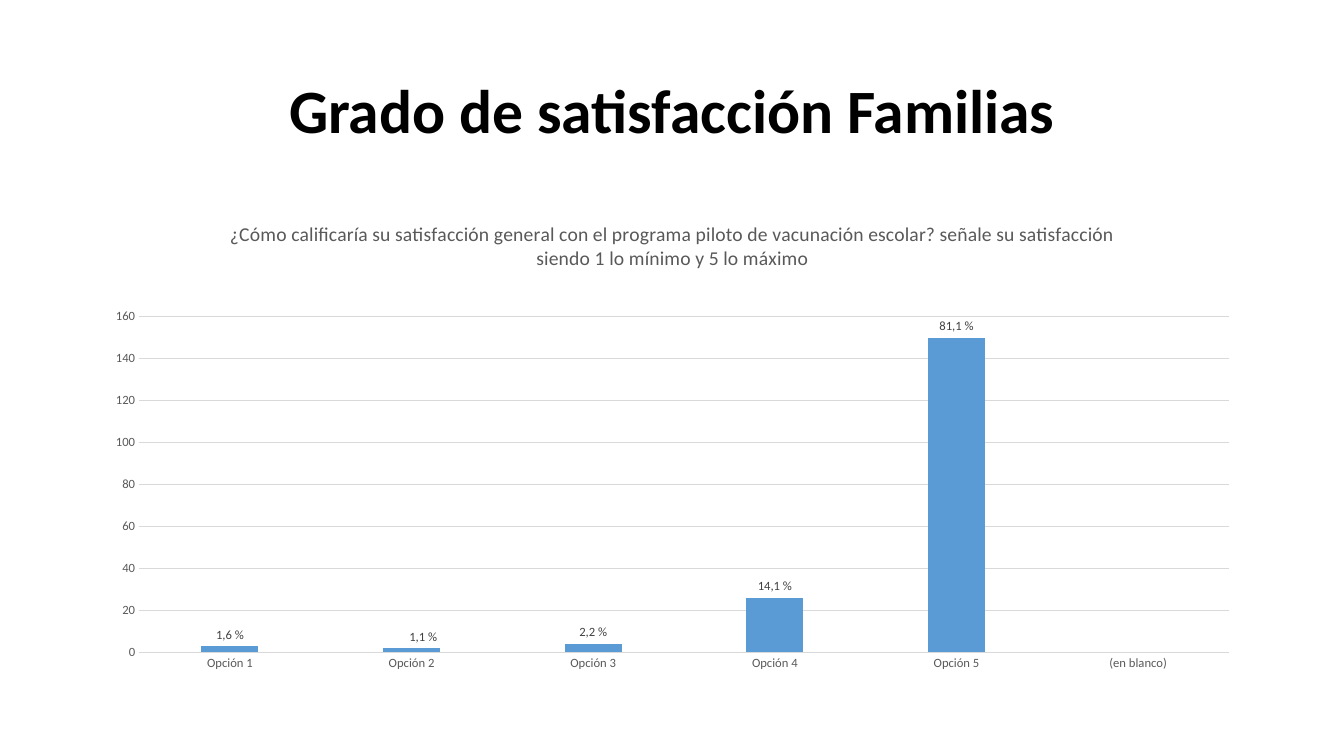
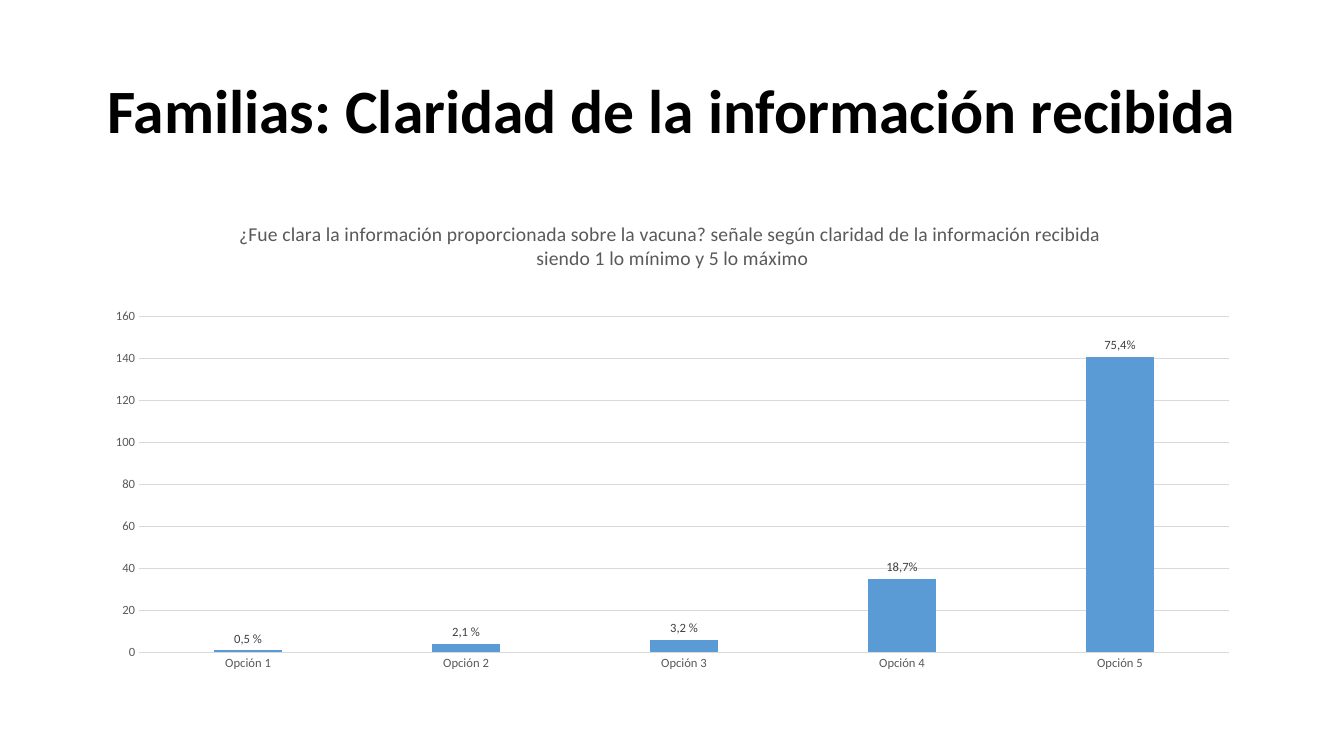
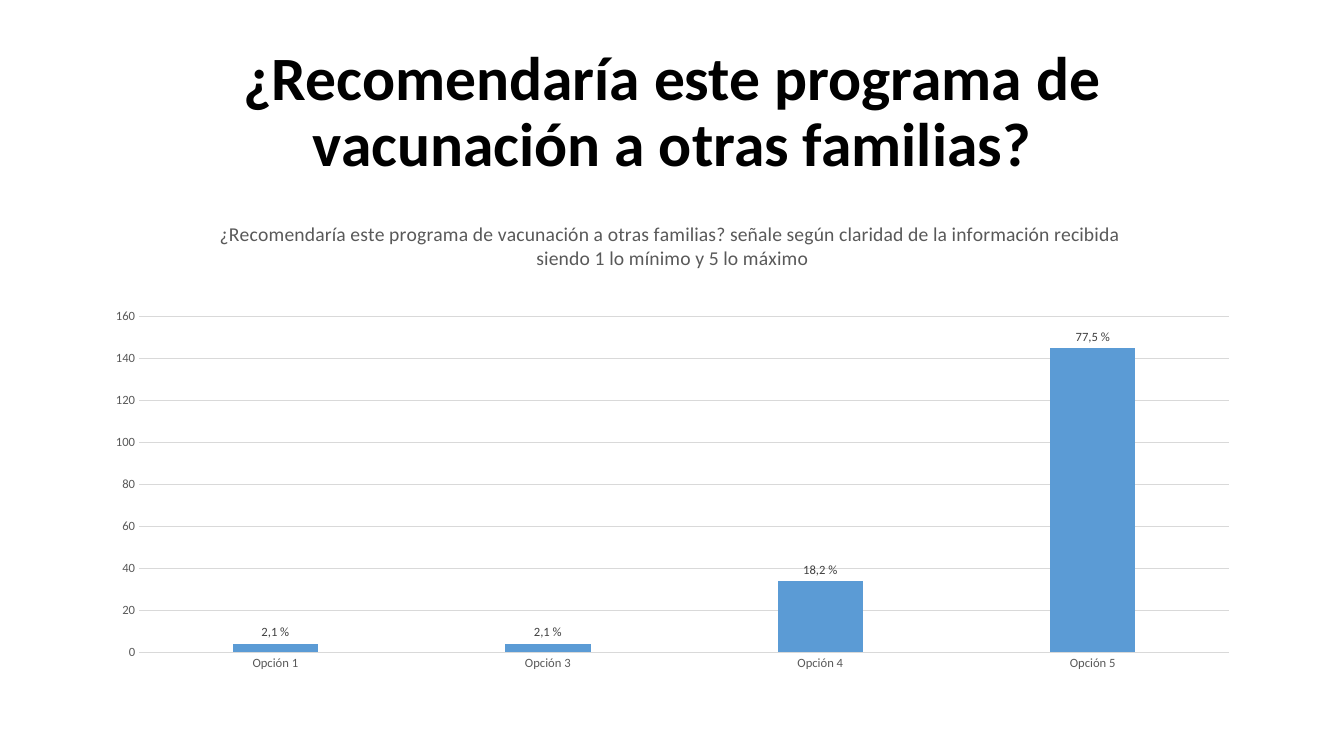
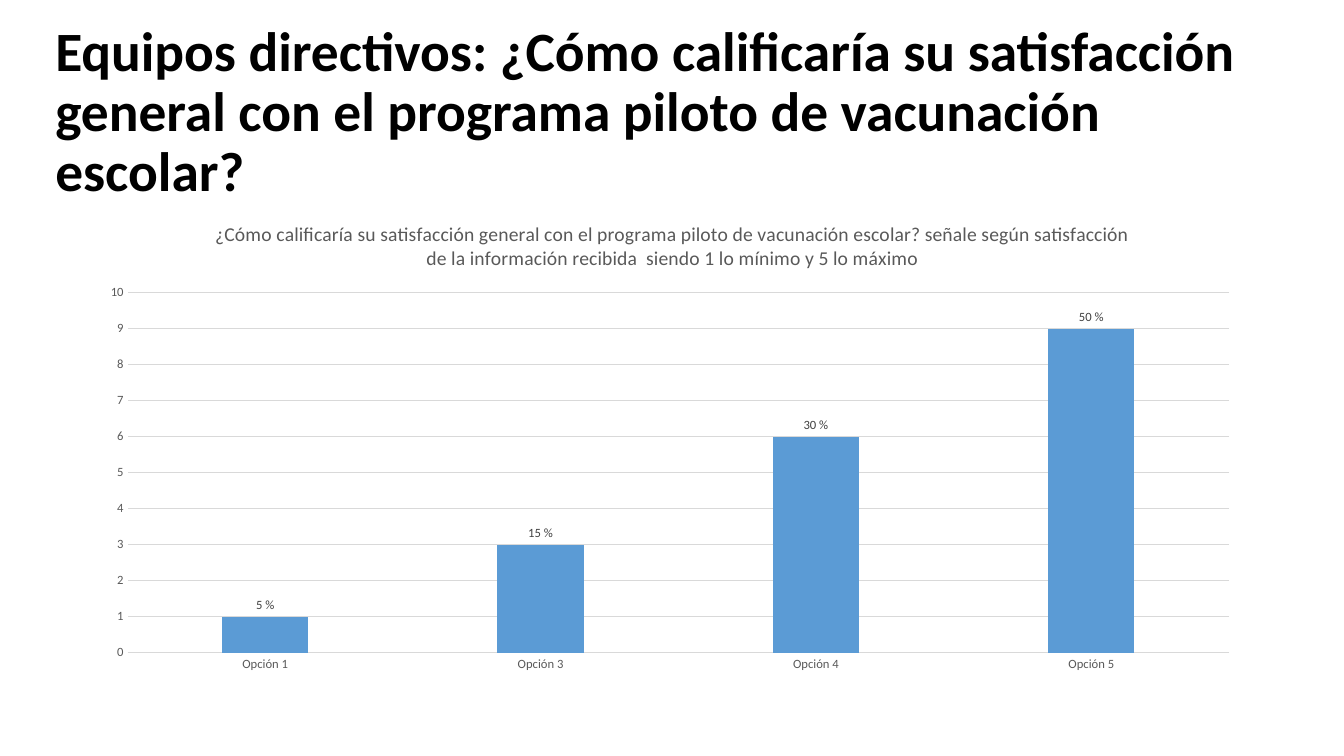
"""Build four slides of survey results, each a title above a column chart."""
from lxml.etree import SubElement
from pptx import Presentation
from pptx.chart.data import CategoryChartData
from pptx.dml.color import RGBColor
from pptx.enum.chart import XL_CHART_TYPE, XL_LABEL_POSITION, XL_TICK_MARK
from pptx.enum.text import MSO_ANCHOR, PP_ALIGN
from pptx.oxml.ns import qn
from pptx.util import Inches, Pt

FONT = "Calibri"
COLORS = {
    "title": "000000",
    "axis_text": "595959",
    "label": "404040",
    "grid": "D9D9D9",
    "bar": "5B9BD5",
}
CENTERED_TITLE = {"left": 0.92, "width": 11.5, "size": 44, "align": PP_ALIGN.CENTER}
WIDE_TITLE = {"left": 0.45, "width": 12.36, "size": 39.6, "align": PP_ALIGN.LEFT}
FAMILY_PLOT = {"left": 0.04, "top": 0.24, "maximum": 160, "step": 20}
TEAM_PLOT = {"left": 0.03, "top": 0.19, "maximum": 10, "step": 1}
PLOT_RIGHT, PLOT_BOTTOM = 0.98, 0.94

SLIDES = [
    {
        "title": "Grado de satisfacción Familias",
        "title_style": CENTERED_TITLE,
        "question": "¿Cómo calificaría su satisfacción general con el programa piloto de vacunación escolar? señale su satisfacción siendo 1 lo mínimo y 5 lo máximo",
        "plot": FAMILY_PLOT,
        "answers": [
            ("Opción 1", 3, "1,6 %"),
            ("Opción 2", 2, "1,1 %"),
            ("Opción 3", 4, "2,2 %"),
            ("Opción 4", 26, "14,1 %"),
            ("Opción 5", 150, "81,1 %"),
            ("(en blanco)", None, None),
        ],
        "label_shifts": {1: 0.01},
    },
    {
        "title": "Familias: Claridad de la información recibida",
        "title_style": CENTERED_TITLE,
        "question": "¿Fue clara la información proporcionada sobre la vacuna? señale según claridad de la información recibida  siendo 1 lo mínimo y 5 lo máximo",
        "plot": FAMILY_PLOT,
        "answers": [
            ("Opción 1", 1, "0,5 %"),
            ("Opción 2", 4, "2,1 %"),
            ("Opción 3", 6, "3,2 %"),
            ("Opción 4", 35, "18,7%"),
            ("Opción 5", 141, "75,4%"),
        ],
    },
    {
        "title": "¿Recomendaría este programa de vacunación a otras familias?",
        "title_style": CENTERED_TITLE,
        "question": "¿Recomendaría este programa de vacunación a otras familias? señale según claridad de la información recibida  siendo 1 lo mínimo y 5 lo máximo",
        "plot": FAMILY_PLOT,
        "answers": [
            ("Opción 1", 4, "2,1 %"),
            ("Opción 3", 4, "2,1 %"),
            ("Opción 4", 34, "18,2 %"),
            ("Opción 5", 145, "77,5 %"),
        ],
    },
    {
        "title": "Equipos directivos: ¿Cómo calificaría su satisfacción general con el programa piloto de vacunación escolar?",
        "title_style": WIDE_TITLE,
        "question": "¿Cómo calificaría su satisfacción general con el programa piloto de vacunación escolar? señale según satisfacción de la información recibida  siendo 1 lo mínimo y 5 lo máximo",
        "plot": TEAM_PLOT,
        "answers": [
            ("Opción 1", 1, "5 %"),
            ("Opción 3", 3, "15 %"),
            ("Opción 4", 6, "30 %"),
            ("Opción 5", 9, "50 %"),
        ],
    },
]


def color(name):
    return RGBColor.from_string(COLORS[name])


def style_font(font, size, color_name, bold=False):
    font.name = FONT
    font.size = Pt(size)
    font.bold = bold
    font.color.rgb = color(color_name)


def style_line(line):
    line.color.rgb = color("grid")
    line.width = Pt(0.75)


def add_run(paragraph, text, size, color_name, bold=False):
    run = paragraph.add_run()
    run.text = text
    style_font(run.font, size, color_name, bold)


def add_title(slide, text, style):
    box = slide.shapes.add_textbox(
        Inches(style["left"]), Inches(0.4), Inches(style["width"]), Inches(1.45)
    )
    frame = box.text_frame
    frame.word_wrap = True
    frame.vertical_anchor = MSO_ANCHOR.MIDDLE
    paragraph = frame.paragraphs[0]
    paragraph.alignment = style["align"]
    paragraph.line_spacing = 0.9
    add_run(paragraph, text, style["size"], "title", bold=True)


def fill_layout(layout, settings):
    manual = SubElement(layout, qn("c:manualLayout"))
    for name, value in settings.items():
        SubElement(manual, qn(f"c:{name}")).set("val", str(value))


def place_plot(chart, plot):
    plot_area = chart._chartSpace.chart.plotArea
    layout = plot_area.find(qn("c:layout"))
    if layout is None:
        layout = SubElement(plot_area, qn("c:layout"))
        plot_area.insert(0, layout)
    fill_layout(layout, {
        "layoutTarget": "inner",
        "xMode": "edge",
        "yMode": "edge",
        "x": plot["left"],
        "y": plot["top"],
        "w": round(PLOT_RIGHT - plot["left"], 2),
        "h": round(PLOT_BOTTOM - plot["top"], 2),
    })


def style_axes(chart, plot):
    for axis in (chart.category_axis, chart.value_axis):
        axis.major_tick_mark = axis.minor_tick_mark = XL_TICK_MARK.NONE
        style_font(axis.tick_labels.font, 9, "axis_text")
    style_line(chart.category_axis.format.line)
    value_axis = chart.value_axis
    value_axis.format.line.fill.background()
    value_axis.minimum_scale = 0
    value_axis.maximum_scale = plot["maximum"]
    value_axis.major_unit = plot["step"]
    style_line(value_axis.major_gridlines.format.line)


def label_bars(series, labels, shifts):
    for index, text in enumerate(labels):
        if text is None:
            continue
        label = series.points[index].data_label
        add_run(label.text_frame.paragraphs[0], text, 9, "label")
        label.position = XL_LABEL_POSITION.OUTSIDE_END
    for index, shift in shifts.items():
        label_element = series._element.findall(f".//{qn('c:dLbl')}")[index]
        layout = SubElement(label_element, qn("c:layout"))
        label_element.insert(1, layout)
        fill_layout(layout, {"x": shift, "y": 0})


def add_answer_chart(slide, content):
    categories, values, labels = zip(*content["answers"])
    data = CategoryChartData()
    data.categories = categories
    data.add_series("Series 1", values)
    chart = slide.shapes.add_chart(
        XL_CHART_TYPE.COLUMN_CLUSTERED,
        Inches(0.92), Inches(2), Inches(11.5), Inches(4.76), data,
    ).chart
    style_font(chart.font, 10, "title")
    chart.has_legend = False
    chart.has_title = True
    add_run(chart.chart_title.text_frame.paragraphs[0], content["question"], 14, "axis_text")
    chart.chart_title.include_in_layout = False
    bars = chart.plots[0]
    bars.gap_width = 219
    bars.overlap = -27
    bars.vary_by_categories = False
    series = bars.series[0]
    series.format.fill.solid()
    series.format.fill.fore_color.rgb = color("bar")
    label_bars(series, labels, content.get("label_shifts", {}))
    style_axes(chart, content["plot"])
    place_plot(chart, content["plot"])


def main():
    presentation = Presentation()
    presentation.slide_width = Inches(13.33)
    presentation.slide_height = Inches(7.5)
    for content in SLIDES:
        slide = presentation.slides.add_slide(presentation.slide_layouts[6])
        add_title(slide, content["title"], content["title_style"])
        add_answer_chart(slide, content)
    presentation.save("out.pptx")


if __name__ == "__main__":
    main()
